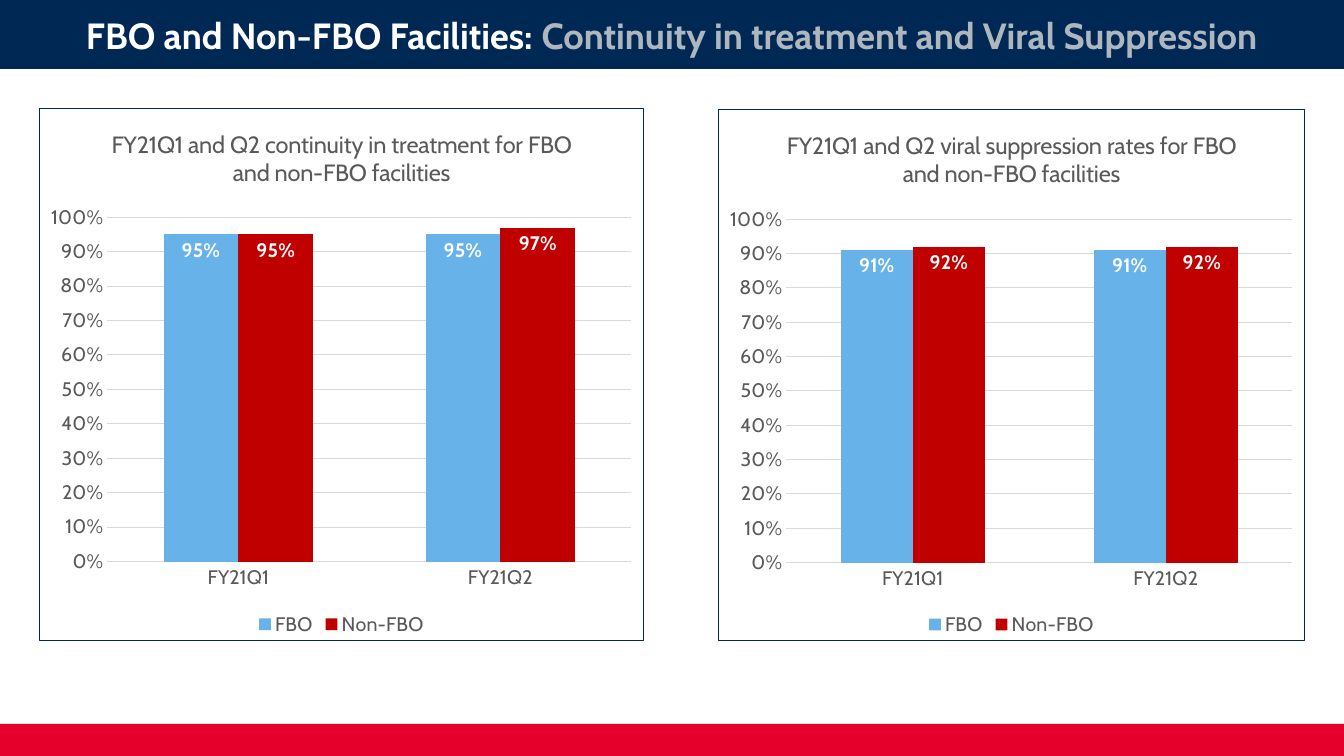
from lxml.etree import SubElement
from pptx import Presentation
from pptx.chart.data import CategoryChartData
from pptx.dml.color import RGBColor
from pptx.enum.chart import XL_CHART_TYPE, XL_LABEL_POSITION, XL_LEGEND_POSITION, XL_TICK_MARK
from pptx.enum.shapes import MSO_SHAPE
from pptx.enum.text import MSO_ANCHOR, PP_ALIGN
from pptx.oxml import parse_xml
from pptx.oxml.ns import nsdecls, qn
from pptx.util import Emu, Pt

SLIDE_WIDTH, SLIDE_HEIGHT = 1344, 756
NAVY, RED, GREY, WHITE = "002855", "E4002B", "AEB7BE", "FFFFFF"
CHART_TEXT, GRID = "595959", "D9D9D9"
SERIES_COLORS = ("67B2E8", "C00000")
PERCENT = "0%"


def px(length):
    return Emu(round(length * 914400 / 100.8))


def rgb(value):
    return RGBColor.from_string(value)


def format_font(font, size, color, bold=False):
    font.name = "Cabin"
    font.size = Pt(size)
    font.bold = bold
    font.color.rgb = rgb(color)


def add_text(paragraph, text, *, size, color, bold=False, align=PP_ALIGN.CENTER):
    paragraph.alignment = align
    run = paragraph.add_run()
    run.text = text
    format_font(run.font, size, color, bold)


def place_plot(chart, frame, plot):
    """Pin the inner plot area; frame and plot are (left, top, width, height) in px."""
    area = chart._chartSpace.chart.plotArea
    for old in area.findall(qn("c:layout")):
        area.remove(old)
    layout = parse_xml(f"<c:layout {nsdecls('c')}/>")
    manual = SubElement(layout, qn("c:manualLayout"))
    left, top, width, height = frame
    settings = {
        "layoutTarget": "inner", "xMode": "edge", "yMode": "edge",
        "x": (plot[0] - left) / width, "y": (plot[1] - top) / height,
        "w": plot[2] / width, "h": plot[3] / height,
    }
    for tag, value in settings.items():
        text = value if isinstance(value, str) else f"{value:.4f}"
        SubElement(manual, qn(f"c:{tag}")).set("val", text)
    area.insert(0, layout)


def add_border(chart, color):
    border = parse_xml(
        f'<c:spPr {nsdecls("c", "a")}><a:solidFill><a:srgbClr val="{WHITE}"/></a:solidFill>'
        f'<a:ln w="9525"><a:solidFill><a:srgbClr val="{color}"/></a:solidFill></a:ln></c:spPr>')
    chart._chartSpace.chart.addnext(border)


class SlideBuilder:
    def __init__(self, slide):
        self.slide = slide

    def band(self, top, height, color):
        band = self.slide.shapes.add_shape(
            MSO_SHAPE.RECTANGLE, 0, px(top), px(SLIDE_WIDTH), px(height))
        band.shadow.inherit = False
        band.fill.solid()
        band.fill.fore_color.rgb = rgb(color)
        band.line.fill.background()
        return band

    def heading(self, height, parts):
        frame = self.band(0, height, NAVY).text_frame
        frame.word_wrap = True
        frame.vertical_anchor = MSO_ANCHOR.MIDDLE
        for text, color in parts:
            add_text(frame.paragraphs[0], text, size=26, color=color, bold=True)

    def rate_chart(self, title, frame, plot, rates):
        data = CategoryChartData(number_format=PERCENT)
        data.categories = ("FY21Q1", "FY21Q2")
        for name, values in rates.items():
            data.add_series(name, values)
        chart = self.slide.shapes.add_chart(
            XL_CHART_TYPE.COLUMN_CLUSTERED, *map(px, frame), data).chart
        format_font(chart.font, 14, CHART_TEXT)

        chart.has_title = True
        add_text(chart.chart_title.text_frame.paragraphs[0], title,
                 size=16.8, color=CHART_TEXT)
        chart.chart_title.include_in_layout = False
        chart.has_legend = True
        chart.legend.position = XL_LEGEND_POSITION.BOTTOM
        chart.legend.include_in_layout = False
        format_font(chart.legend.font, 14, CHART_TEXT)

        self.axes(chart)
        self.columns(chart.plots[0])
        place_plot(chart, frame, plot)
        add_border(chart, NAVY)

    def axes(self, chart):
        periods, percents = chart.category_axis, chart.value_axis
        for axis in (periods, percents):
            axis.major_tick_mark = axis.minor_tick_mark = XL_TICK_MARK.NONE
            format_font(axis.tick_labels.font, 14, CHART_TEXT)
        percents.minimum_scale, percents.maximum_scale = 0, 1
        percents.major_unit = 0.1
        percents.tick_labels.number_format = PERCENT
        percents.tick_labels.number_format_is_linked = False
        percents.format.line.fill.background()
        for line in (periods.format.line, percents.major_gridlines.format.line):
            line.color.rgb = rgb(GRID)
            line.width = Pt(0.75)

    def columns(self, plot):
        plot.gap_width = 150
        plot.overlap = 0
        plot.vary_by_categories = False
        for series, color in zip(plot.series, SERIES_COLORS):
            series.format.fill.solid()
            series.format.fill.fore_color.rgb = rgb(color)
            labels = series.data_labels
            labels.show_value = True
            labels.position = XL_LABEL_POSITION.INSIDE_END
            labels.number_format = PERCENT
            labels.number_format_is_linked = False
            format_font(labels.font, 14, WHITE, bold=True)


def main():
    presentation = Presentation()
    presentation.slide_width = px(SLIDE_WIDTH)
    presentation.slide_height = px(SLIDE_HEIGHT)
    builder = SlideBuilder(presentation.slides.add_slide(presentation.slide_layouts[6]))

    footer_height = 32
    builder.band(SLIDE_HEIGHT - footer_height, footer_height, RED)
    builder.heading(69, (
        ("FBO and Non-FBO Facilities: ", WHITE),
        ("Continuity in treatment and Viral Suppression", GREY),
    ))
    builder.rate_chart(
        "FY21Q1 and Q2 viral suppression rates for FBO and non-FBO facilities",
        (718, 109, 587, 532), (786, 219, 507, 344),
        {"FBO": (0.91, 0.91), "Non-FBO": (0.92, 0.92)})
    builder.rate_chart(
        "FY21Q1 and Q2 continuity in treatment for FBO and non-FBO facilities",
        (39, 108, 605, 533), (107, 217, 525, 345),
        {"FBO": (0.95, 0.95), "Non-FBO": (0.95, 0.97)})
    presentation.save("out.pptx")


if __name__ == "__main__":
    main()
